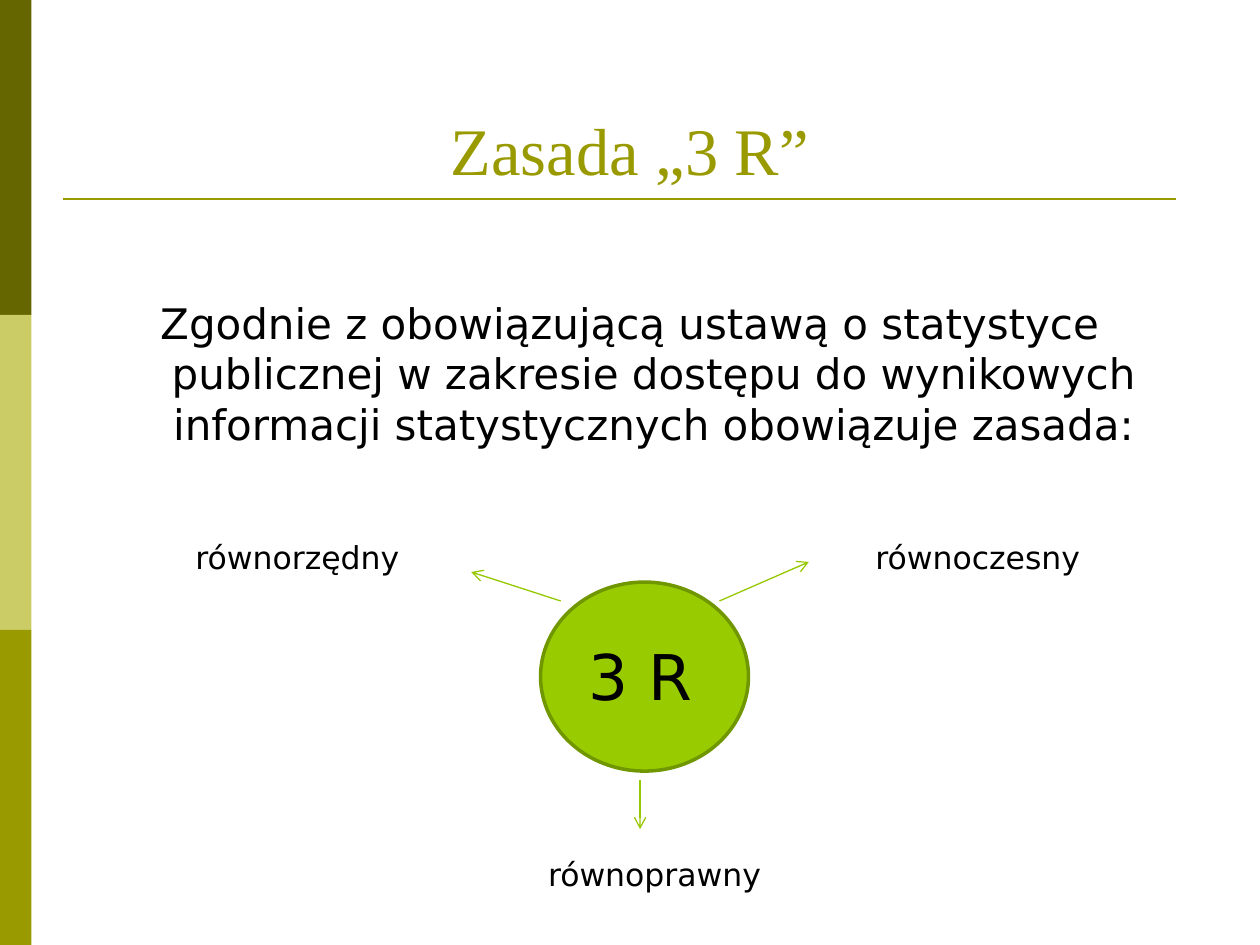
from pptx import Presentation
from pptx import util as u
from pptx.dml import color
from pptx.enum import shapes, text
from pptx.oxml import ns
from lxml import etree

BODY = ("Zgodnie z obowiązującą ustawą o statystyce publicznej w zakresie dostępu "
        "do wynikowych informacji statystycznych obowiązuje zasada:")


def rgb(value):
    return color.RGBColor.from_string(value)


class SlideBuilder:
    """Draws styled elements on the current slide."""

    font = "DejaVu Sans"
    ink = "000000"
    olive = "999900"

    def __init__(self, slide):
        self.slide = slide

    def shape(self, kind, bounds, fill, line=None, width=0):
        shape = self.slide.shapes.add_shape(kind, *map(u.Inches, bounds))
        shape.shadow.inherit = False
        shape.fill.solid()
        shape.fill.fore_color.rgb = rgb(fill)
        if line:
            shape.line.color.rgb = rgb(line)
            shape.line.width = u.Pt(width)
        else:
            shape.line.fill.background()

    def line(self, start, end, hue, width, arrow=False):
        line = self.slide.shapes.add_connector(
            shapes.MSO_CONNECTOR.STRAIGHT, *map(u.Inches, start + end))
        line.line.color.rgb = rgb(hue)
        line.line.width = u.Pt(width)
        if arrow:
            etree.SubElement(line.line._get_or_add_ln(), ns.qn("a:tailEnd"), type="arrow")
        etree.SubElement(line._element.spPr, ns.qn("a:effectLst"))

    def text(self, bounds, words, size, font=None, hue=None,
             anchor=text.MSO_ANCHOR.TOP, hanging=0):
        box = self.slide.shapes.add_textbox(*map(u.Inches, bounds))
        frame = box.text_frame
        frame.word_wrap = True
        frame.vertical_anchor = anchor
        para = frame.paragraphs[0]
        para.alignment = text.PP_ALIGN.CENTER
        if hanging:
            props = para._p.get_or_add_pPr()
            props.set("marL", str(u.Inches(hanging)))
            props.set("indent", str(-u.Inches(hanging)))
        span = para.add_run()
        span.text = words
        span.font.size = u.Pt(size)
        span.font.name = font or self.font
        span.font.color.rgb = rgb(hue or self.ink)


def main():
    deck = Presentation()
    deck.slide_width, deck.slide_height = u.Inches(10), u.Inches(7.5)
    page = SlideBuilder(deck.slides.add_slide(deck.slide_layouts[6]))

    for index, fill in enumerate(("666600", "CCCC66", page.olive)):
        page.shape(shapes.MSO_SHAPE.RECTANGLE, (0, 2.5 * index, 0.25, 2.5), fill)
    page.line((0.5, 1.58), (9.33, 1.58), page.olive, 1.5)

    page.text((0.5, 0.3, 9, 1.25), "Zasada „3 R”", 38, "Times New Roman",
              page.olive, text.MSO_ANCHOR.BOTTOM)
    page.text((0.5, 2.31, 9, 4.39), BODY, 24, hanging=0.38)

    page.shape(shapes.MSO_SHAPE.OVAL, (4.29, 4.62, 1.65, 1.5), "99CC00", "719700", 2)
    page.text((4.53, 5.01, 1.1, 0.71), "3 R", 36)

    branches = (
        ("równoczesny", (6.5, 4.22, 2.52, 0.4), (5.71, 4.77), (6.42, 4.46)),
        ("równorzędny", (1.22, 4.22, 2.28, 0.4), (4.45, 4.77), (3.74, 4.54)),
        ("równoprawny", (3.74, 6.74, 2.91, 0.4), (5.08, 6.19), (5.08, 6.58)),
    )
    for label, bounds, start, end in branches:
        page.line(start, end, "96C800", 0.75, arrow=True)
        page.text(bounds, label, 18)

    deck.save("out.pptx")


if __name__ == "__main__":
    main()
